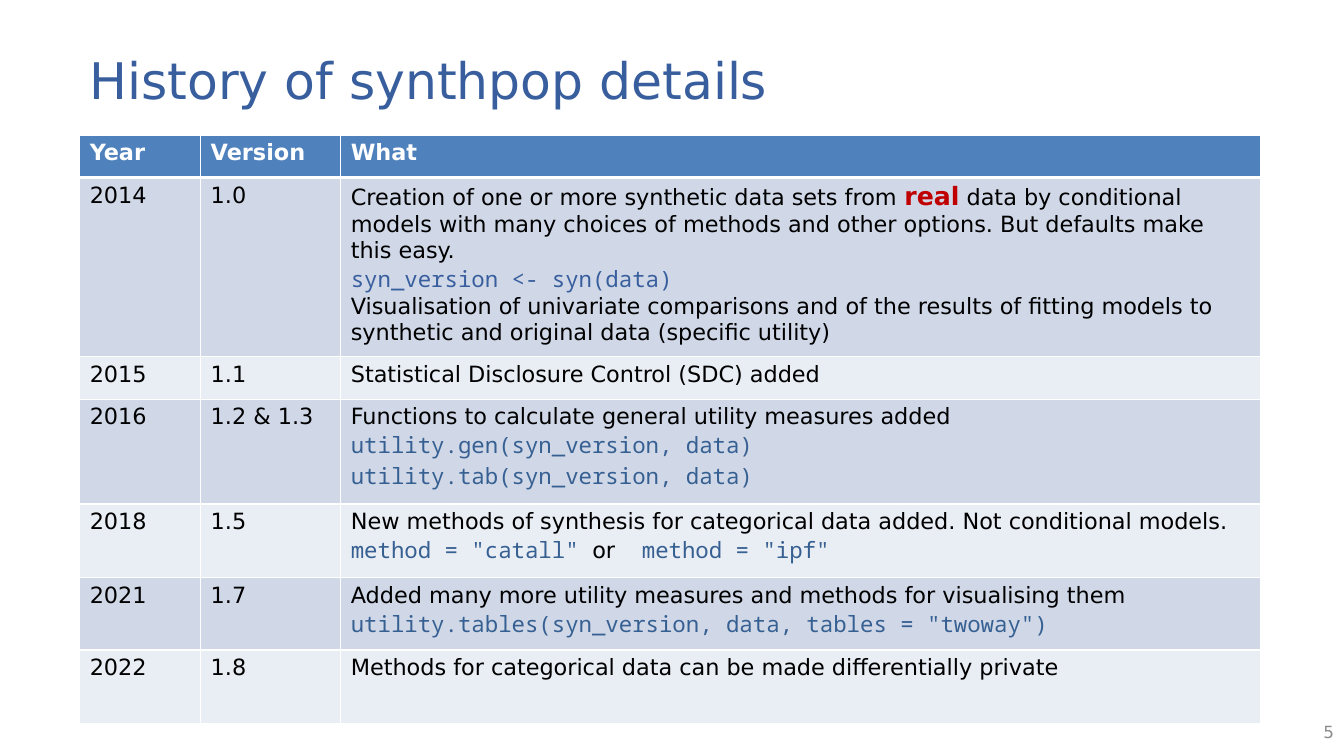
from lxml.etree import SubElement
from pptx import Presentation
from pptx.dml.color import RGBColor
from pptx.enum.text import MSO_ANCHOR, PP_ALIGN
from pptx.oxml.ns import qn
from pptx.util import Inches, Pt

COLORS = {
    "title": "385E9D",
    "header": "4F81BD",
    "odd_row": "D0D8E8",
    "even_row": "E9EDF4",
    "white": "FFFFFF",
    "black": "000000",
    "code": "376092",
    "emphasis": "C00000",
    "number": "8C8C8C",
}
SANS, MONO = "DejaVu Sans", "Noto Sans Mono"
STYLES = {
    "title": (SANS, 36, "title", False),
    "number": (SANS, 12, "number", False),
    "header": (SANS, 16, "white", True),
    "body": (SANS, 16, "black", False),
    "strong": (SANS, 18, "emphasis", True),
    "call": (MONO, 16, "title", False),
    "code": (MONO, 16, "code", False),
}

COLUMN_WIDTHS = [1.2, 1.39, 9.12]
ROW_HEIGHTS = [0.42, 1.78, 0.42, 1.04, 0.73, 0.72, 0.73]
HEADINGS = ["Year", "Version", "What"]
RELEASES = [
    ("2014", "1.0", [
        [("Creation of one or more synthetic data sets from ", "body"),
         ("real", "strong"),
         (" data by conditional models with many choices of methods and other "
          "options. But defaults make this easy.", "body")],
        [("syn_version <- syn(data)", "call")],
        [("Visualisation of univariate comparisons and of the results of fitting "
          "models to synthetic and original data (specific utility)", "body")],
    ]),
    ("2015", "1.1", [[("Statistical Disclosure Control (SDC) added", "body")]]),
    ("2016", "1.2 & 1.3", [
        [("Functions to calculate general utility measures added", "body")],
        [("utility.gen(syn_version, data)", "code")],
        [("utility.tab(syn_version, data)", "code")],
    ]),
    ("2018", "1.5", [
        [("New methods of synthesis for categorical data added. "
          "Not conditional models.", "body")],
        [('method = "catall" ', "code"), ("or", "body"),
         ('  method = "ipf"', "code")],
    ]),
    ("2021", "1.7", [
        [("Added many more utility measures and methods for visualising them",
          "body")],
        [('utility.tables(syn_version, data, tables = "twoway")', "code")],
    ]),
    ("2022", "1.8", [
        [("Methods for categorical data can be made differentially private",
          "body")],
    ]),
]


def color(name):
    """Return the named palette colour."""
    return RGBColor.from_string(COLORS[name])


def write_paragraphs(text_frame, paragraphs):
    """Fill a text frame with paragraphs of (text, style) runs."""
    for index, parts in enumerate(paragraphs):
        paragraph = text_frame.add_paragraph() if index else text_frame.paragraphs[0]
        for text, style in parts:
            run = paragraph.add_run()
            run.text = text
            name, size, color_name, bold = STYLES[style]
            run.font.name = name
            run.font.size = Pt(size)
            run.font.bold = bold
            run.font.color.rgb = color(color_name)


def add_label(slide, box, text, style, alignment):
    """Place one line of vertically centred text in a box."""
    shape = slide.shapes.add_textbox(*map(Inches, box))
    text_frame = shape.text_frame
    text_frame.word_wrap = True
    text_frame.vertical_anchor = MSO_ANCHOR.MIDDLE
    write_paragraphs(text_frame, [[(text, style)]])
    text_frame.paragraphs[0].alignment = alignment


def set_borders(cell, widths):
    """Draw white borders around a cell, given widths in points by side."""
    properties = cell._tc.get_or_add_tcPr()
    for index, (side, width) in enumerate(widths.items()):
        line = SubElement(properties, qn(f"a:ln{side}"), w=str(Pt(width)))
        fill = SubElement(line, qn("a:solidFill"))
        SubElement(fill, qn("a:srgbClr"), val=COLORS["white"])
        properties.insert(index, line)


def add_history_table(slide, box):
    """Place the table of releases in a box."""
    rows = [[[[(heading, "header")]] for heading in HEADINGS]]
    rows += [[[[(year, "body")]], [[(version, "body")]], what]
             for year, version, what in RELEASES]
    frame = slide.shapes.add_table(len(rows), len(HEADINGS), *map(Inches, box))
    table = frame.table
    for column, width in zip(table.columns, COLUMN_WIDTHS):
        column.width = Inches(width)
    for row, height in zip(table.rows, ROW_HEIGHTS):
        row.height = Inches(height)
    for row_index, row in enumerate(rows):
        band = "odd_row" if row_index % 2 else "even_row"
        for column_index, paragraphs in enumerate(row):
            cell = table.cell(row_index, column_index)
            write_paragraphs(cell.text_frame, paragraphs)
            cell.fill.solid()
            cell.fill.fore_color.rgb = color(band if row_index else "header")
            set_borders(cell, {"L": 1, "R": 1,
                               "T": 3 if row_index == 1 else 1,
                               "B": 1 if row_index else 3})


def main():
    """Build the slide and save it."""
    presentation = Presentation()
    presentation.slide_width = Inches(13.33)
    presentation.slide_height = Inches(7.5)
    slide = presentation.slides.add_slide(presentation.slide_layouts[6])
    add_label(slide, (0.79, 0.39, 12, 0.79), "History of synthpop details",
              "title", PP_ALIGN.LEFT)
    add_history_table(slide, (0.79, 1.34, sum(COLUMN_WIDTHS), sum(ROW_HEIGHTS)))
    add_label(slide, (10.33, 7.06, 3, 0.4), "5", "number", PP_ALIGN.RIGHT)
    presentation.save("out.pptx")


if __name__ == "__main__":
    main()
